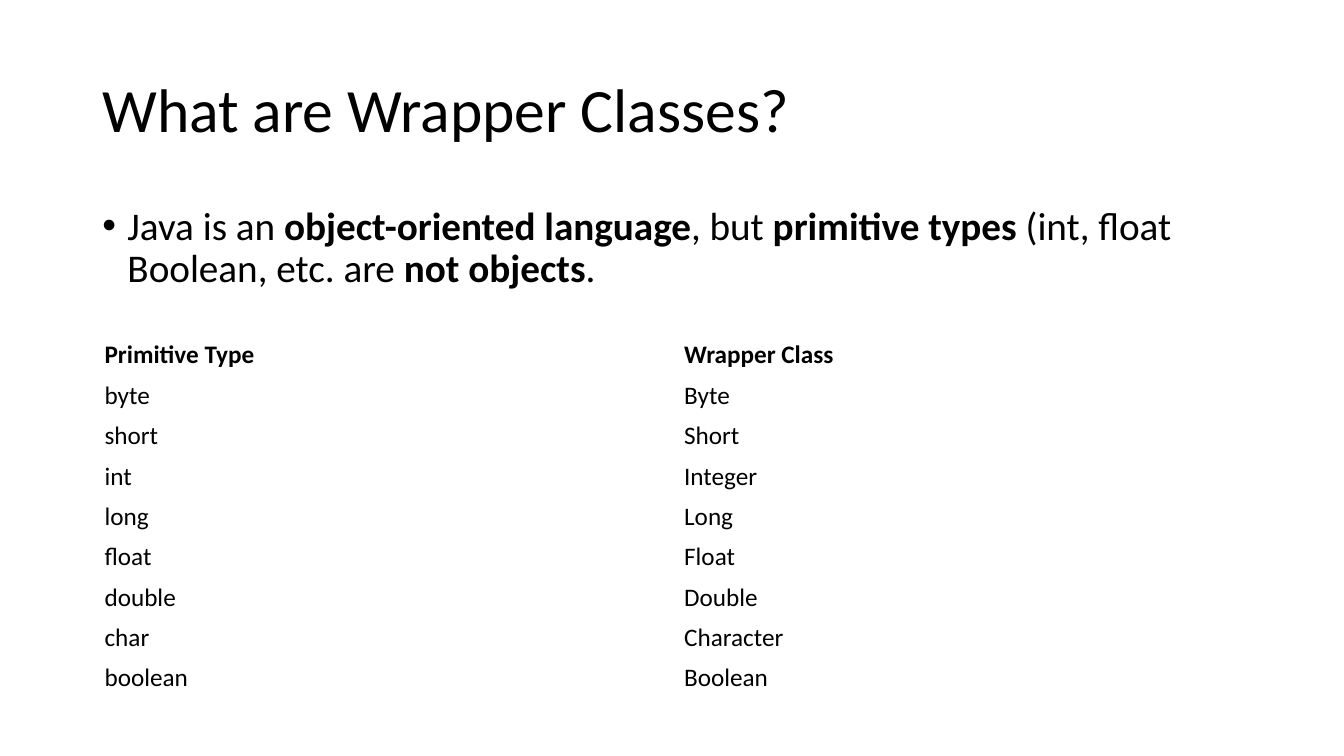
from pptx import Presentation
from pptx import util as u
from pptx.dml.color import RGBColor
from pptx.enum import text
from pptx.oxml.ns import qn
from lxml import etree

PX = 9525
FONT = "Calibri"
COLORS = {"text": "000000"}
TITLE = "What are Wrapper Classes?"
INTRO = [
    ("Java is an ", False), ("object-oriented language", True), (", but ", False),
    ("primitive types", True), (" (int, float Boolean, etc. are ", False),
    ("not objects", True), (".", False),
]
TYPES = [
    ("Primitive Type", "Wrapper Class"),
    ("byte", "Byte"),
    ("short", "Short"),
    ("int", "Integer"),
    ("long", "Long"),
    ("float", "Float"),
    ("double", "Double"),
    ("char", "Character"),
    ("boolean", "Boolean"),
]


def px(*lengths):
    """Turn px lengths into EMU."""
    return [u.Emu(n * PX) for n in lengths]


def add_run(p, content, size=18, bold=False, color="text"):
    """Append a formatted run to a paragraph."""
    r = p.add_run()
    r.text = content
    r.font.name = FONT
    r.font.size = u.Pt(size)
    r.font.bold = bold
    r.font.color.rgb = RGBColor.from_string(COLORS[color])


def add_bullet(p, indent):
    """Give a paragraph a round bullet with a hanging indent in px."""
    pPr = p._p.get_or_add_pPr()
    pPr.set("marL", str(indent * PX))
    pPr.set("indent", str(-indent * PX))
    etree.SubElement(pPr, qn("a:buFont"), typeface="Arial")
    etree.SubElement(pPr, qn("a:buChar"), char="•")


def add_text(s, box, runs, size, anchor=text.MSO_ANCHOR.TOP, before=0, bullet=0):
    """Add a one-paragraph text box made of (text, bold) runs."""
    tf = s.shapes.add_textbox(*px(*box)).text_frame
    tf.word_wrap = True
    tf.vertical_anchor = anchor
    p = tf.paragraphs[0]
    p.line_spacing = 0.9
    p.space_before = u.Pt(before)
    if bullet:
        add_bullet(p, bullet)
    for content, bold in runs:
        add_run(p, content, size=size, bold=bold)


def add_plain_table(s, box, rows):
    """Add an unfilled table whose first row is bold."""
    table = s.shapes.add_table(len(rows), len(rows[0]), *px(*box)).table
    table.first_row = table.horz_banding = False
    for i, row in enumerate(rows):
        for j, content in enumerate(row):
            cell = table.cell(i, j)
            cell.fill.background()
            cell.vertical_anchor = text.MSO_ANCHOR.MIDDLE
            add_run(cell.text_frame.paragraphs[0], content, bold=i == 0)


def main():
    """Build the wrapper classes slide."""
    prs = Presentation()
    prs.slide_width, prs.slide_height = px(1280, 720)
    s = prs.slides.add_slide(prs.slide_layouts[6])
    add_text(s, (88, 38, 1104, 139), [(TITLE, False)], 44, anchor=text.MSO_ANCHOR.MIDDLE)
    add_text(s, (88, 192, 1104, 457), INTRO, 28, before=10, bullet=24)
    add_plain_table(s, (90, 319, 1104, 346), TYPES)
    prs.save("out.pptx")


if __name__ == "__main__":
    main()
